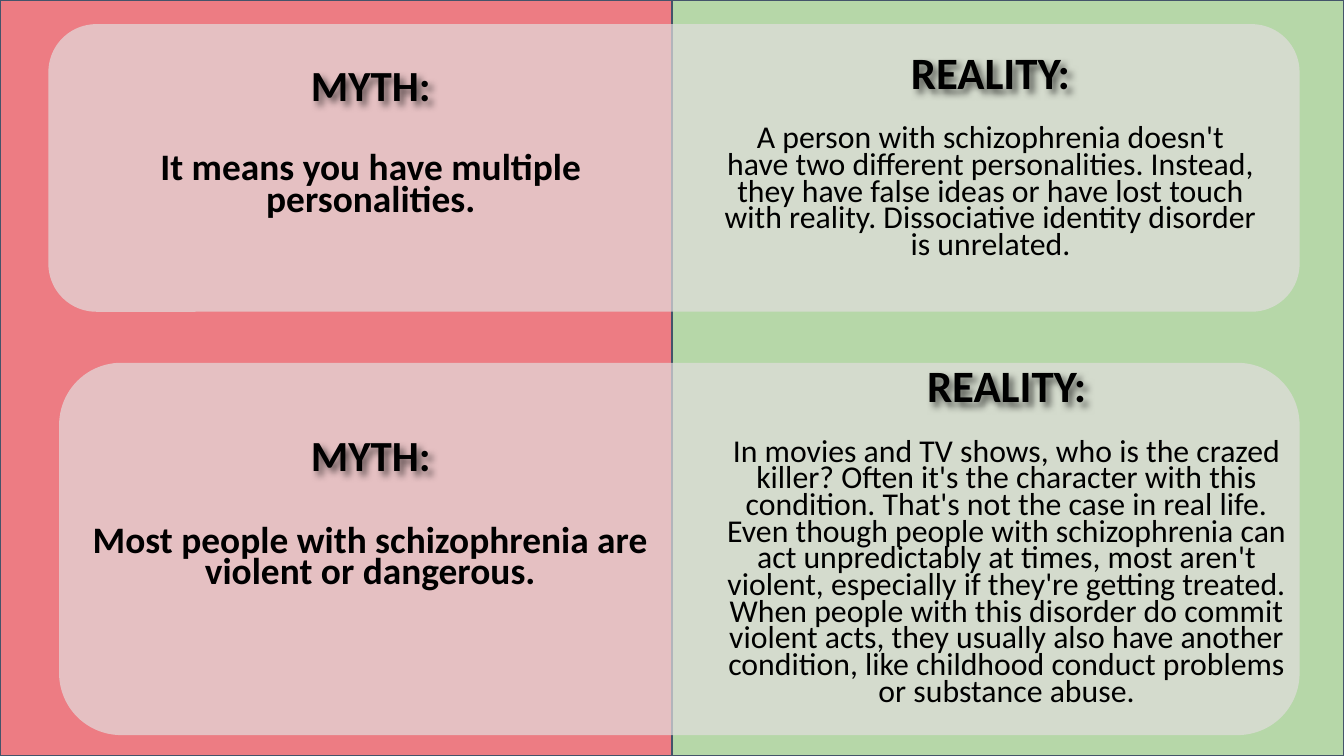
from lxml import etree
from pptx import Presentation
from pptx.dml.color import RGBColor
from pptx.enum.shapes import MSO_SHAPE
from pptx.enum.text import MSO_ANCHOR, PP_ALIGN
from pptx.oxml import parse_xml
from pptx.oxml.ns import nsdecls, qn
from pptx.util import Inches, Pt

WIDTH = 10
HEIGHT = WIDTH * 9 / 16
HALF = WIDTH / 2
REALITY_INDENT = 0.19

HEADING_SHADOW = f"""<a:effectLst {nsdecls("a")}>
  <a:outerShdw blurRad="50800" dist="38100" dir="2700000" algn="tl" rotWithShape="0">
    <a:srgbClr val="000000"><a:alpha val="60000"/></a:srgbClr>
  </a:outerShdw>
</a:effectLst>"""

# Per row: card box, heading boxes, and (box, text) for each statement
ROWS = [
    {
        "card": (0.36, 0.18, 9.31, 2.14),
        "myth heading": (0.76, 0.47, 4, 0.51),
        "myth": ((0.76, 1.12, 4, 0.97),
                 "It means you have multiple personalities."),
        "reality heading": (5.12, 0.37, 4.31, 0.61),
        "reality": ((5.12, 0.91, 4.31, 1.3),
                    "A person with schizophrenia doesn't have two different "
                    "personalities. Instead, they have false ideas or have lost "
                    "touch with reality. Dissociative identity disorder is "
                    "unrelated."),
    },
    {
        "card": (0.44, 2.7, 9.23, 2.77),
        "myth heading": (0.76, 3.22, 4, 0.51),
        "myth": ((0.6, 3.89, 4.31, 0.86),
                 "Most people with schizophrenia are violent or dangerous."),
        "reality heading": (5.24, 2.7, 4.31, 0.61),
        "reality": ((5.12, 3.24, 4.55, 2.1),
                    "In movies and TV shows, who is the crazed killer? Often it's "
                    "the character with this condition. That's not the case in "
                    "real life. Even though people with schizophrenia can act "
                    "unpredictably at times, most aren't violent, especially if "
                    "they're getting treated. When people with this disorder do "
                    "commit violent acts, they usually also have another "
                    "condition, like childhood conduct problems or substance "
                    "abuse."),
    },
]


def color(hex_value):
    return RGBColor.from_string(hex_value)


def add_panel(slide, left, fill):
    panel = slide.shapes.add_shape(MSO_SHAPE.RECTANGLE, Inches(left), 0,
                                   Inches(HALF), Inches(HEIGHT))
    panel.shadow.inherit = False
    panel.fill.solid()
    panel.fill.fore_color.rgb = color(fill)
    panel.line.color.rgb = color("44546A")
    panel.line.width = Pt(0.75)


def add_card(slide, box):
    """Add a rounded card that lets 30% of the panels show through."""
    card = slide.shapes.add_shape(MSO_SHAPE.ROUNDED_RECTANGLE, *map(Inches, box))
    card.shadow.inherit = False
    card.fill.solid()
    card.fill.fore_color.rgb = color("E2DEDE")
    card.line.fill.background()
    fill_color = card.fill._xPr.find(qn("a:solidFill"))[0]
    etree.SubElement(fill_color, qn("a:alpha"), val="70000")


def add_text(slide, box, text, size, bold=True, spacing=0.7, indent=0):
    writing = slide.shapes.add_textbox(*map(Inches, box))
    frame = writing.text_frame
    frame_format = {
        "word_wrap": True,
        "vertical_anchor": MSO_ANCHOR.TOP,
        "margin_left": Inches(0.07),
        "margin_right": Inches(0.07),
        "margin_top": Inches(0.04),
        "margin_bottom": Inches(0.04),
    }
    for name, value in frame_format.items():
        setattr(frame, name, value)
    paragraph = frame.paragraphs[0]
    paragraph.text = text
    paragraph.alignment = PP_ALIGN.CENTER
    paragraph.line_spacing = spacing
    if indent:
        paragraph._p.get_or_add_pPr().set("marL", str(Inches(indent)))
    font = paragraph.runs[0].font
    for name, value in {"name": "Calibri", "size": Pt(size), "bold": bold}.items():
        setattr(font, name, value)
    font.color.rgb = color("000000")
    return writing


def add_heading(slide, box, text, size, indent=0):
    heading = add_text(slide, box, text, size, spacing=0.8, indent=indent)
    heading._element.spPr.append(parse_xml(HEADING_SHADOW))


def add_row(slide, row):
    add_card(slide, row["card"])
    add_heading(slide, row["myth heading"], "MYTH:", 23)
    add_text(slide, *row["myth"], 20)
    add_heading(slide, row["reality heading"], "REALITY:", 24, REALITY_INDENT)
    add_text(slide, *row["reality"], 17, bold=False, indent=REALITY_INDENT)


def main():
    deck = Presentation()
    deck.slide_width, deck.slide_height = Inches(WIDTH), Inches(HEIGHT)
    slide = deck.slides.add_slide(deck.slide_layouts.get_by_name("Blank"))
    add_panel(slide, HALF, "B6D7A8")
    add_panel(slide, 0, "ED7C83")
    for row in ROWS:
        add_row(slide, row)
    deck.save("out.pptx")


if __name__ == "__main__":
    main()
